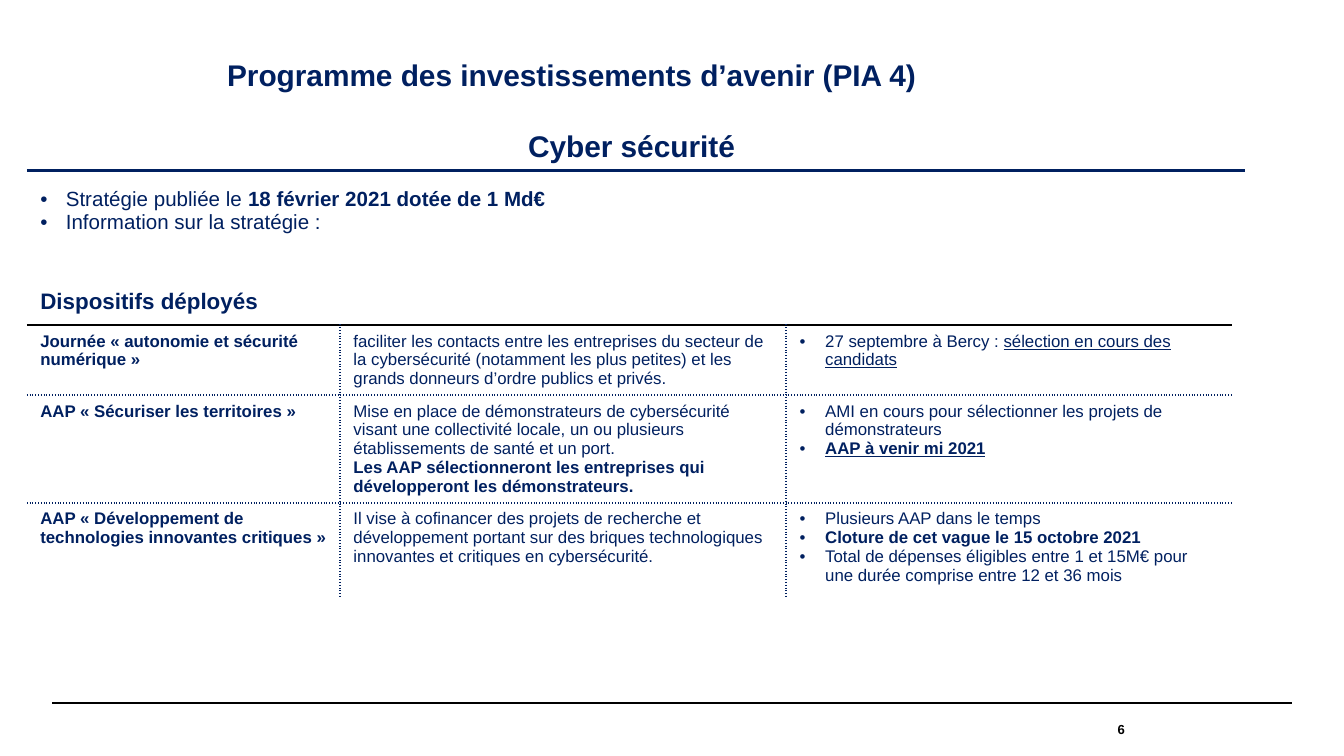
from lxml.etree import SubElement
from pptx import Presentation
from pptx.dml.color import RGBColor
from pptx.enum.shapes import MSO_CONNECTOR as Conn
from pptx.enum.text import MSO_ANCHOR as Anchor, PP_ALIGN as Align
from pptx.oxml import parse_xml
from pptx.oxml.ns import nsdecls, qn
from pptx.util import Inches, Pt

NAVY = RGBColor(0x00, 0x20, 0x60)
BLACK = RGBColor(0, 0, 0)
PLAIN = "{2D5ABB26-0587-4C30-8999-92F81FD0307C}"  # no style, no grid

# Border kinds: colour, width, dash
BOLD = (NAVY, 1.5, "solid")
THIN = (BLACK, 1, "solid")
DOTS = (NAVY, 1.5, "sysDot")

# Content: a cell is a list of paragraphs, a paragraph a list of
# (text, marks) runs; marks are "b" for bold and "u" for underline
TITLE = "Programme des investissements d’avenir (PIA 4)"
THEME = [[("Cyber sécurité ", "b")]]
FACTS = [
    [("Stratégie publiée le ", ""), ("18 février 2021 dotée de 1 Md€", "b")],
    [("Information sur la stratégie :", "")],
]
HEAD = [[("Dispositifs déployés", "b")]]
ROWS = [
    (
        [[("Journée « autonomie et sécurité numérique »", "b")]],
        [[("faciliter les contacts entre les entreprises du secteur de la "
           "cybersécurité (notamment les plus petites) et les grands donneurs "
           "d’ordre publics et privés.", "")]],
        [[("27 septembre à Bercy : ", ""),
          ("sélection en cours des candidats", "u")]],
    ),
    (
        [[("AAP « Sécuriser les territoires »", "b")]],
        [[("Mise en place de démonstrateurs de cybersécurité visant une "
           "collectivité locale, un ou plusieurs établissements de santé et "
           "un port.", "")],
         [("Les AAP sélectionneront les entreprises qui développeront les "
           "démonstrateurs.", "b")]],
        [[("AMI en cours pour sélectionner les projets de démonstrateurs", "")],
         [("AAP à venir mi 2021", "bu")]],
    ),
    (
        [[("AAP « Développement de technologies innovantes critiques »", "b")]],
        [[("Il vise à cofinancer des projets de recherche et développement "
           "portant sur des briques technologiques innovantes et critiques en "
           "cybersécurité.", "")]],
        [[("Plusieurs AAP dans le temps", "")],
         [("Cloture de cet vague le 15 octobre 2021", "b")],
         [("Total de dépenses éligibles entre 1 et 15M€ pour une durée "
           "comprise entre 12 et 36 mois", "")]],
    ),
]


def style(font, size, color=NAVY, bold=None):
    font.name, font.size, font.bold = "Arial", Pt(size), bold
    font.color.rgb = color


def bare(frame):
    frame.margin_left = frame.margin_right = 0
    frame.margin_top = frame.margin_bottom = 0
    frame.word_wrap = True


def bullet(para):
    props = para._p.get_or_add_pPr()
    props.set("marL", str(Inches(0.19)))
    props.set("indent", str(-Inches(0.19)))
    SubElement(props, qn("a:buFont")).set("typeface", "Arial")
    SubElement(props, qn("a:buChar")).set("char", "•")


def write(cell, paras, size, dots=False):
    frame = cell.text_frame
    for i, runs in enumerate(paras):
        para = frame.add_paragraph() if i else frame.paragraphs[0]
        if dots:
            bullet(para)
        style(para.font, size)
        for text, marks in runs:
            run = para.add_run()
            run.text = text
            style(run.font, size, bold="b" in marks)
            if "u" in marks:
                run.font.underline = True


def edge(cell, **sides):
    # Sides come in the order L, R, T, B, and stand before the fill
    props = cell._tc.get_or_add_tcPr()
    for side, kind in sides.items():
        if kind:
            color, width, dash = kind
            line = parse_xml(
                f'<a:ln{side} {nsdecls("a")} w="{Pt(width)}"><a:solidFill>'
                f'<a:srgbClr val="{color}"/></a:solidFill>'
                f'<a:prstDash val="{dash}"/></a:ln{side}>')
            props.insert(len(props) - 1, line)


def grid(slide, left, top, cols, rows):
    table = slide.shapes.add_table(
        len(rows), len(cols), Inches(left), Inches(top),
        Inches(sum(cols)), Inches(sum(rows))).table
    table.first_row = table.horz_banding = False
    table._tbl.tblPr.find(qn("a:tableStyleId")).text = PLAIN
    for col, width in zip(table.columns, cols):
        col.width = Inches(width)
    for row, height in zip(table.rows, rows):
        row.height = Inches(height)
    for cell in table.iter_cells():
        cell.fill.background()
    return table


prs = Presentation()
prs.slide_width = Inches(10)
prs.slide_height = prs.slide_width * 9 // 16
slide = prs.slides.add_slide(prs.slide_layouts[5])

# Title
title = slide.shapes.title
title.left, title.top = Inches(1.69), Inches(0.45)
title.width, title.height = Inches(8.2), Inches(0.47)
bare(title.text_frame)
title.text_frame.vertical_anchor = Anchor.TOP
title.text_frame.text = TITLE
para = title.text_frame.paragraphs[0]
para.alignment, para.line_spacing = Align.LEFT, 0.9
style(para.font, 16, bold=True)

# Theme and key facts
intro = grid(slide, 0.2, 0.92, [9.06], [0.35, 0.72])
top, body = intro.cell(0, 0), intro.cell(1, 0)
write(top, THEME, 16)
top.text_frame.paragraphs[0].alignment = Align.CENTER
write(body, FACTS, 11, dots=True)
body.margin_top = Inches(0.13)
edge(top, B=BOLD)
edge(body, T=BOLD)

# Table of schemes: dotted inner lines, solid rule under the heading
plan = grid(slide, 0.2, 2.1, [2.33, 3.32, 3.32], [0.32, 0.52, 0.8, 0.7])
plan.cell(0, 0).merge(plan.cell(0, 2))
write(plan.cell(0, 0), HEAD, 12)
for c in range(3):
    edge(plan.cell(0, c), B=THIN)
for r, row in enumerate(ROWS, 1):
    for c, paras in enumerate(row):
        cell = plan.cell(r, c)
        write(cell, paras, 9, dots=c == 2)
        edge(cell,
             L=DOTS if c > 0 else None,
             R=DOTS if c < 2 else None,
             T=DOTS if r > 1 else THIN,
             B=DOTS if r < len(ROWS) else None)

# Footer rule and page number
rule = slide.shapes.add_connector(
    Conn.STRAIGHT, Inches(0.39), Inches(5.23), Inches(9.61), Inches(5.23))
rule.line.color.rgb, rule.line.width = BLACK, Pt(0.8)
SubElement(rule._element.spPr, qn("a:effectLst"))

page = slide.shapes.add_textbox(
    Inches(6.89), Inches(5.23), Inches(1.48), Inches(0.39)).text_frame
bare(page)
page.vertical_anchor = Anchor.MIDDLE
page.text = "6"
page.paragraphs[0].alignment = Align.RIGHT
style(page.paragraphs[0].font, 7, BLACK, True)

prs.save("out.pptx")
